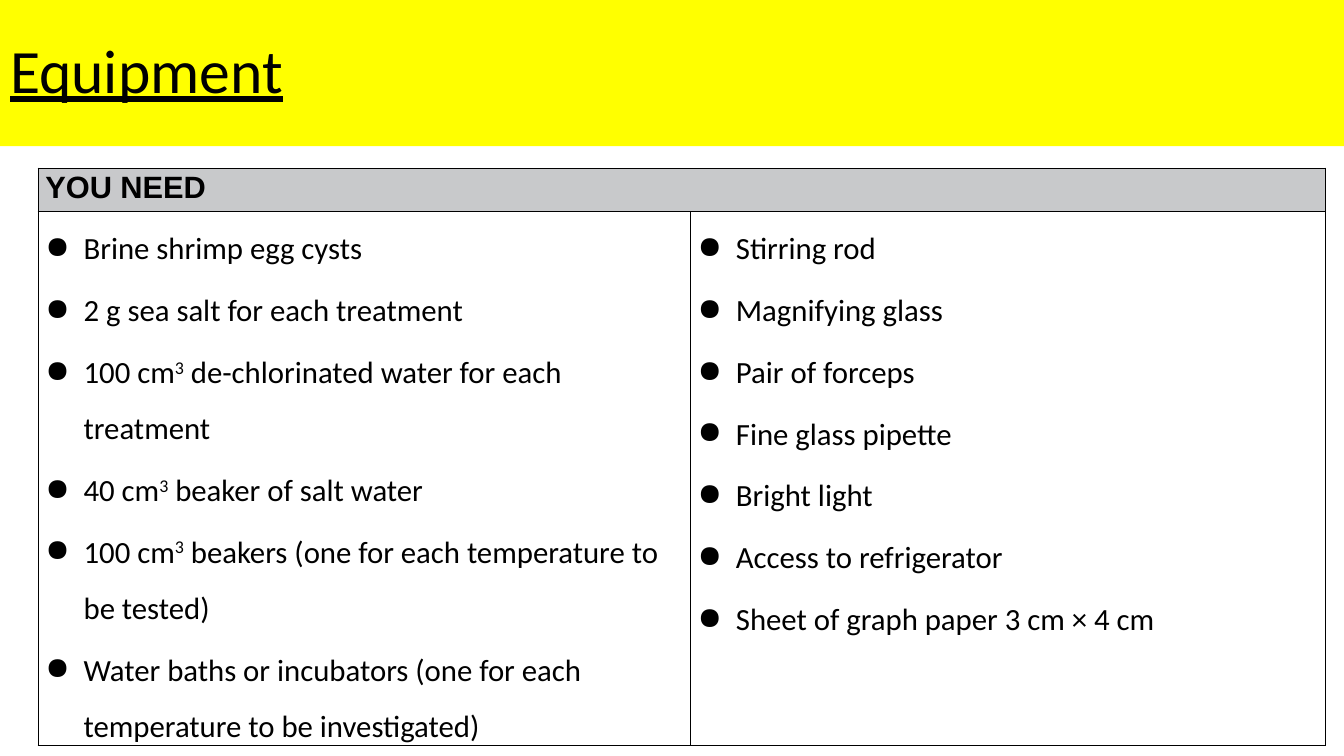
from dataclasses import dataclass
from lxml import etree
from pptx import Presentation, util as u
from pptx.dml.color import RGBColor
from pptx.enum import text as t
from pptx.oxml import parse_xml
from pptx.oxml.ns import qn, nsdecls


@dataclass(frozen=True)
class Theme:
    ink: str = "000000"
    band: str = "FFFF00"
    head: str = "C8C9CB"
    font: str = "Calibri"
    bold: str = "Arial"
    title: int = 44
    body: int = 22


THEME = Theme()
WIDE, HIGH = u.Inches(13.33), u.Inches(7.5)
COLS = (6.47, 6.3)
ROWS = (0.43, 5.23)

# A caret marks the next character as superscript.
LEFT = (
    "Brine shrimp egg cysts",
    "2 g sea salt for each treatment",
    "100 cm^3 de-chlorinated water for each treatment",
    "40 cm^3 beaker of salt water",
    "100 cm^3 beakers (one for each temperature to be tested)",
    "Water baths or incubators (one for each temperature to be investigated)",
)
RIGHT = (
    "Stirring rod",
    "Magnifying glass",
    "Pair of forceps",
    "Fine glass pipette",
    "Bright light",
    "Access to refrigerator",
    "Sheet of graph paper 3 cm × 4 cm",
)


def style(run, size, font, bold=False, line=False):
    run.font.size = u.Pt(size)
    run.font.name = font
    run.font.bold = bold
    run.font.underline = line
    run.font.color.rgb = RGBColor.from_string(THEME.ink)


def space(para, line, before, after):
    para.line_spacing = line
    para.space_before, para.space_after = u.Pt(before), u.Pt(after)


def banner(slide, words):
    title = slide.shapes.title
    title.left, title.top = 0, 0
    title.width, title.height = WIDE, u.Inches(1.45)
    title.fill.solid()
    title.fill.fore_color.rgb = RGBColor.from_string(THEME.band)
    frame = title.text_frame
    frame.text = words
    frame.auto_size = t.MSO_AUTO_SIZE.NONE
    frame.vertical_anchor = t.MSO_ANCHOR.MIDDLE
    para = frame.paragraphs[0]
    para.alignment = t.PP_ALIGN.LEFT
    space(para, 0.9, 0, 0)
    style(para.runs[0], THEME.title, THEME.font, line=True)


def bullet(para):
    props = para._p.get_or_add_pPr()
    props.set("marL", str(u.Inches(0.38)))
    props.set("indent", str(-u.Inches(0.38)))
    etree.SubElement(props, qn("a:buChar")).set("char", "●")


def script(para, words):
    """Add runs, raising each character that follows a caret."""
    first, *rest = words.split("^")
    parts = [(first, False)]
    for part in rest:
        parts += [(part[0], True), (part[1:], False)]
    for part, high in parts:
        run = para.add_run()
        run.text = part
        style(run, THEME.body, THEME.font)
        if high:
            run.font._element.set("baseline", "30000")


def items(cell, lines):
    frame = cell.text_frame
    for i, words in enumerate(lines):
        para = frame.add_paragraph() if i else frame.paragraphs[0]
        space(para, 1.5, 2, 2)
        bullet(para)
        script(para, words)


def frame(cell):
    """Set the cell's margins, clear its fill and rule its four sides."""
    cell.margin_left = cell.margin_right = u.Inches(0.07)
    cell.margin_top = cell.margin_bottom = 0
    cell.fill.background()
    props = cell._tc.get_or_add_tcPr()
    for i, side in enumerate("LRTB"):
        props.insert(i, parse_xml(
            f'<a:ln{side} {nsdecls("a")} w="{u.Pt(1)}"><a:solidFill>'
            f'<a:srgbClr val="{THEME.ink}"/></a:solidFill></a:ln{side}>'))


def header(cell, words):
    cell.fill.solid()
    cell.fill.fore_color.rgb = RGBColor.from_string(THEME.head)
    cell.text_frame.text = words
    para = cell.text_frame.paragraphs[0]
    space(para, 1.07, 4, 3)
    style(para.runs[0], THEME.body, THEME.bold, bold=True)


def kit(slide):
    table = slide.shapes.add_table(
        len(ROWS), len(COLS), u.Inches(0.38), u.Inches(1.67),
        u.Inches(sum(COLS)), u.Inches(sum(ROWS))).table
    table.first_row = table.horz_banding = False
    for col, size in zip(table.columns, COLS):
        col.width = u.Inches(size)
    for row, size in zip(table.rows, ROWS):
        row.height = u.Inches(size)
    for cell in table.iter_cells():
        frame(cell)
    table.cell(0, 0).merge(table.cell(0, 1))
    header(table.cell(0, 0), "YOU NEED")
    for col, lines in enumerate((LEFT, RIGHT)):
        items(table.cell(1, col), lines)


def main():
    deck = Presentation()
    deck.slide_width, deck.slide_height = WIDE, HIGH
    slide = deck.slides.add_slide(deck.slide_layouts[5])
    kit(slide)
    banner(slide, "Equipment")
    deck.save("out.pptx")


if __name__ == "__main__":
    main()
